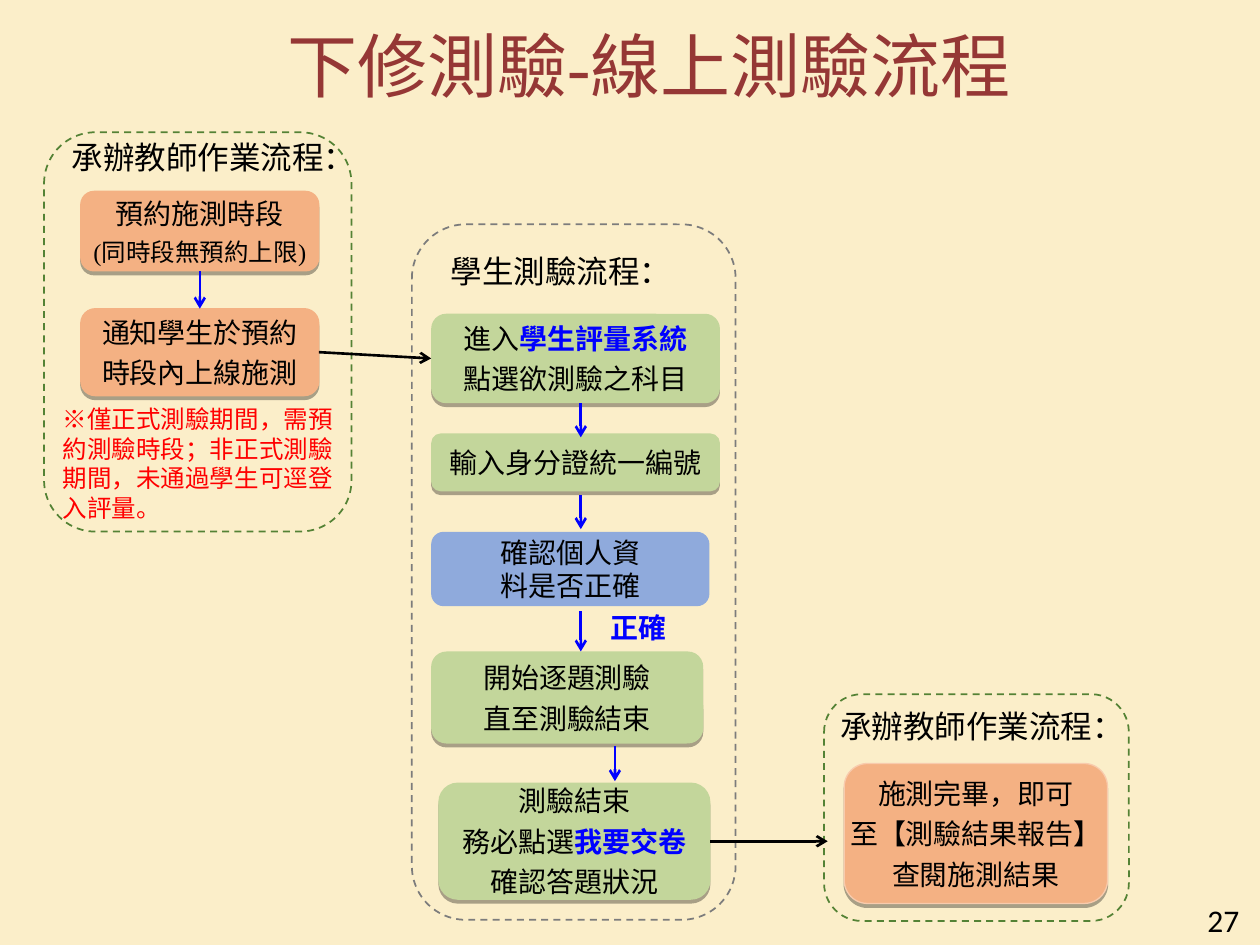
from lxml.etree import SubElement
from pptx import Presentation
from pptx.dml.color import RGBColor
from pptx.enum.dml import MSO_LINE
from pptx.enum.shapes import MSO_CONNECTOR, MSO_SHAPE
from pptx.enum.text import MSO_ANCHOR, PP_ALIGN
from pptx.oxml.ns import qn
from pptx.util import Pt

COLORS = {
    "background": "FBEEC9", "title": "953735", "text": "000000",
    "emphasis": "0000FF", "note": "FF0000", "orange": "F4B183",
    "orange_edge": "F8CBAD", "green": "C3D69B", "blue": "8FAADC",
    "teacher_frame": "548235", "student_frame": "7C7C7C",
}
SERIF, SANS = "Times New Roman", "Noto Sans CJK SC"
BOTTOM, LEFT, RIGHT, TOP = 2, 1, 3, 0


def rgb(name):
    return RGBColor.from_string(COLORS[name])


def place(box, left, top, width, height):
    """Turn a position inside a region into one on the slide."""
    return Pt(box[0] + left), Pt(box[1] + top), Pt(width), Pt(height)


def style_run(run, size, color, font=SERIF, bold=False):
    run.font.size, run.font.name, run.font.bold = Pt(size), font, bold
    run.font.color.rgb = rgb(color)
    SubElement(run.font._element, qn("a:ea"), typeface=SANS)


def add_text(slide, position, text, size, color="text", font=SERIF, bold=False,
             align=PP_ALIGN.LEFT, anchor=MSO_ANCHOR.TOP, wrap=False):
    text_frame = slide.shapes.add_textbox(*position).text_frame
    text_frame.word_wrap = wrap
    text_frame.vertical_anchor = anchor
    text_frame.text = text
    paragraph = text_frame.paragraphs[0]
    paragraph.alignment = align
    style_run(paragraph.runs[0], size, color, font, bold)


def add_frame(slide, box, color):
    frame = slide.shapes.add_shape(MSO_SHAPE.ROUNDED_RECTANGLE, *place(box, 0, 0, *box[2:]))
    frame.shadow.inherit = False
    frame.fill.background()
    frame.line.color.rgb = rgb(color)
    frame.line.width = Pt(1)
    frame.line.dash_style = MSO_LINE.DASH


def add_shadow(shape):
    effects = shape._element.spPr.find(qn("a:effectLst"))
    shadow = SubElement(effects, qn("a:outerShdw"), dist=str(Pt(2.2)), dir="5400000",
                        algn="t", rotWithShape="0")
    color = SubElement(shadow, qn("a:srgbClr"), val=COLORS["text"])
    SubElement(color, qn("a:alpha"), val="32000")


def add_step(slide, position, lines, fill, edge=None, raised=True, sizes=None):
    """Add a rounded step; text between asterisks is emphasised."""
    step = slide.shapes.add_shape(MSO_SHAPE.ROUNDED_RECTANGLE, *position)
    step.shadow.inherit = False
    step.fill.solid()
    step.fill.fore_color.rgb = rgb(fill)
    if edge:
        step.line.color.rgb = rgb(edge)
        step.line.width = Pt(0.75)
    else:
        step.line.fill.background()
    if raised:
        add_shadow(step)
    text_frame = step.text_frame
    text_frame.word_wrap = False
    text_frame.vertical_anchor = MSO_ANCHOR.MIDDLE
    for index, line in enumerate(lines):
        paragraph = text_frame.add_paragraph() if index else text_frame.paragraphs[0]
        paragraph.alignment = PP_ALIGN.CENTER
        if raised:
            paragraph.space_before = Pt(2 if index else 0)
            paragraph.space_after = Pt(2)
        for part, text in enumerate(line.split("*")):
            if text:
                run = paragraph.add_run()
                run.text = text
                strong = part % 2 == 1
                style_run(run, sizes[index] if sizes else 16,
                          "emphasis" if strong else "text", bold=strong)
    return step


def add_arrow(slide, start, end, color):
    arrow = slide.shapes.add_connector(
        MSO_CONNECTOR.STRAIGHT, *(Pt(value) for value in (*start, *end)))
    arrow.line.color.rgb = rgb(color)
    arrow.line.width = Pt(1.5)
    SubElement(arrow.line._get_or_add_ln(), qn("a:tailEnd"), type="arrow")
    SubElement(arrow._element.spPr, qn("a:effectLst"))
    return arrow


def add_booking(slide, box):
    """Teacher tasks before the test; returns the last step."""
    add_frame(slide, box, "teacher_frame")
    add_text(slide, place(box, 8.6, 0, 178, 33), "承辦教師作業流程：", 18, font=SANS)
    book = add_step(slide, place(box, 21, 33.8, 136, 45.4),
                    ["預約施測時段", "(同時段無預約上限)"], "orange", "orange", sizes=(16, 14))
    notify = add_step(slide, place(box, 21, 100.8, 136, 49.7),
                      ["通知學生於預約", "時段內上線施測"], "orange", "orange")
    arrow = add_arrow(slide, (0, 0), (0, 0), "emphasis")
    arrow.begin_connect(book, BOTTOM)
    arrow.end_connect(notify, TOP)
    add_text(slide, place(box, 3.6, 152, 169, 75),
             "※僅正式測驗期間，需預約測驗時段；非正式測驗期間，未通過學生可逕登入評量。",
             14, "note", wrap=True)
    return notify


def add_test(slide, box):
    """Student steps; returns the first and the last one."""
    add_frame(slide, box, "student_frame")
    add_text(slide, place(box, 15.1, 12.2, 142, 29), "學生測驗流程：", 18, font=SANS)
    steps = [
        ((11, 51.1, 165, 51.1), ["進入*學生評量系統*", "點選欲測驗之科目"], "green"),
        ((11, 119.5, 165, 33.1), ["輸入身分證統一編號"], "green"),
        ((11, 175.7, 159, 42.5), ["確認個人資", "料是否正確"], "blue"),
        ((11, 244.1, 155.5, 52.6), ["開始逐題測驗", "直至測驗結束"], "green"),
        ((15.1, 319, 155.5, 67), ["測驗結束", "務必點選*我要交卷*", "確認答題狀況"], "green"),
    ]
    shapes = [add_step(slide, place(box, *position), lines, fill, raised=fill == "green")
              for position, lines, fill in steps]
    for x, top, bottom in ((96.5, 102.2, 121.7), (96.5, 154.8, 174.2),
                           (96.5, 221, 244.1), (116, 298, 318.2)):
        add_arrow(slide, (box[0] + x, box[1] + top), (box[0] + x, box[1] + bottom), "emphasis")
    add_text(slide, place(box, 106.6, 217.4, 47, 26.6), "正確", 16, "emphasis", SANS, True)
    return shapes[0], shapes[-1]


def add_report(slide, box):
    """Teacher task after the test."""
    add_frame(slide, box, "teacher_frame")
    add_text(slide, place(box, 2.2, 3.6, 178, 28), "承辦教師作業流程：", 18, font=SANS)
    add_step(slide, place(box, 11.5, 39.6, 150.5, 80),
             ["施測完畢，即可", "至【測驗結果報告】", "查閱施測結果"], "orange", "orange_edge")


def main():
    presentation = Presentation()
    presentation.slide_width, presentation.slide_height = Pt(720), Pt(540)
    slide = presentation.slides.add_slide(presentation.slide_layouts[6])
    slide.background.fill.solid()
    slide.background.fill.fore_color.rgb = rgb("background")

    # Title and page number
    add_text(slide, place((0, 0), 46.8, -7.9, 648, 90), "下修測驗-線上測驗流程", 40, "title",
             align=PP_ALIGN.CENTER, anchor=MSO_ANCHOR.MIDDLE, wrap=True)
    add_text(slide, place((0, 0), 547.2, 511.2, 168, 28.8), "27", 18, font="Calibri",
             align=PP_ALIGN.RIGHT, anchor=MSO_ANCHOR.MIDDLE, wrap=True)

    # The three stages
    notify = add_booking(slide, (25.2, 75.6, 175.7, 228.2))
    enter, submit = add_test(slide, (235.4, 128.2, 185, 397.4))
    add_report(slide, (470.9, 396.7, 174.2, 129.6))

    # Arrows between the stages
    to_test = add_arrow(slide, (182, 204.5), (246.4, 204.5), "text")
    to_test.begin_connect(notify, RIGHT)
    to_test.end_connect(enter, LEFT)
    to_report = add_arrow(slide, (406, 480.7), (473, 480.7), "text")
    to_report.begin_connect(submit, RIGHT)

    presentation.save("out.pptx")


if __name__ == "__main__":
    main()
